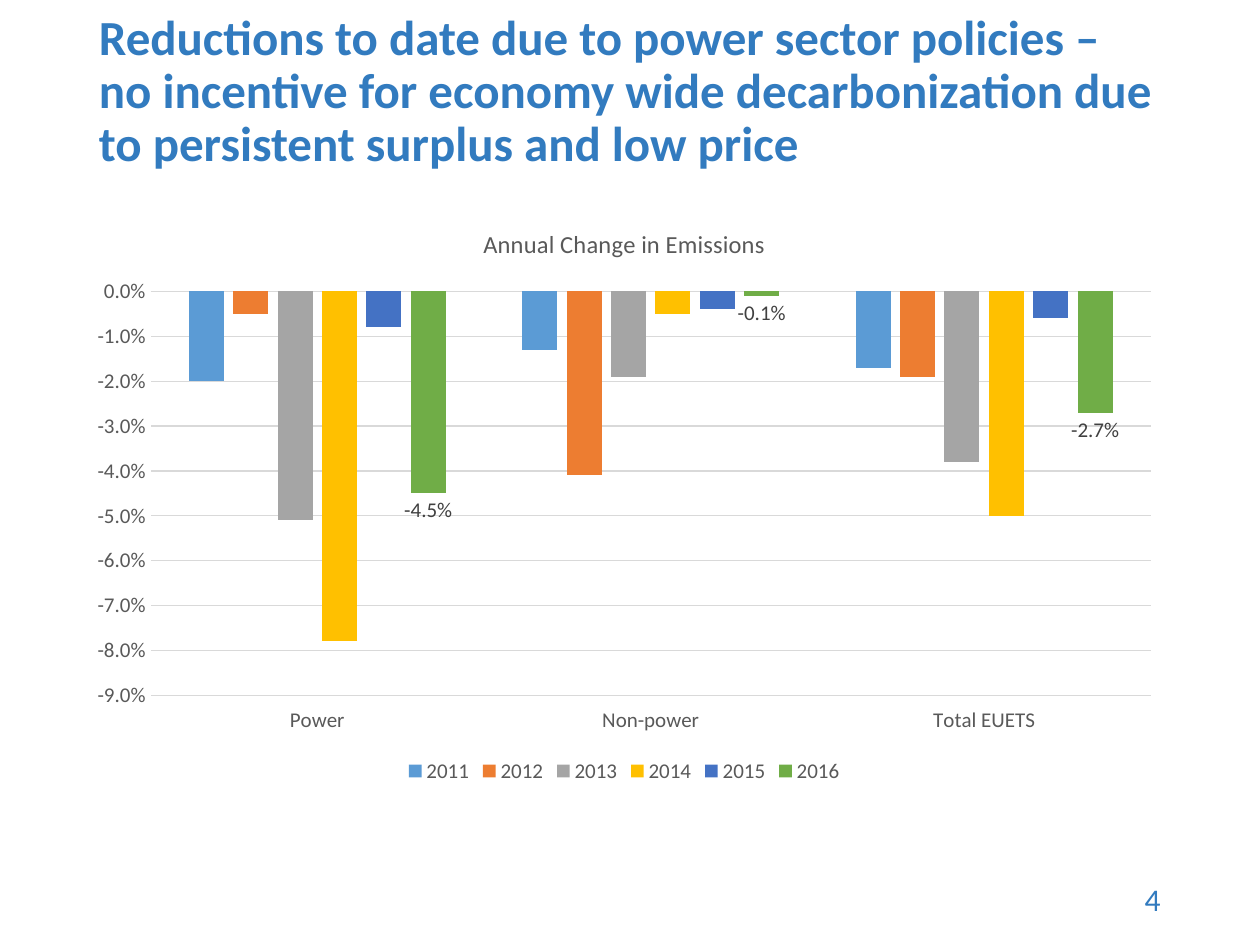
"""Build a slide with a clustered column chart of annual emission changes."""
from dataclasses import dataclass

from pptx import Presentation
from pptx.chart.data import CategoryChartData
from pptx.dml.color import RGBColor
from pptx.enum.chart import (XL_CHART_TYPE, XL_LABEL_POSITION, XL_LEGEND_POSITION,
                             XL_TICK_LABEL_POSITION, XL_TICK_MARK)
from pptx.enum.text import MSO_ANCHOR, PP_ALIGN
from pptx.util import Pt


@dataclass(frozen=True)
class Theme:
    font: str = "Calibri"
    accent: str = "327BBF"
    muted: str = "595959"
    label: str = "404040"
    grid: str = "D9D9D9"
    title_size: int = 28
    number_size: int = 18
    chart_title_size: int = 14
    chart_size: int = 12


theme = Theme()


def style_font(font, size, color, bold=False):
    font.name = theme.font
    font.size = Pt(size)
    font.bold = bold
    font.color.rgb = RGBColor.from_string(color)


def add_text(slide, text, box, size, alignment, bold=False):
    frame = slide.shapes.add_textbox(*map(Pt, box)).text_frame
    frame.word_wrap = True
    frame.vertical_anchor = MSO_ANCHOR.MIDDLE
    paragraph = frame.paragraphs[0]
    paragraph.text = text
    paragraph.alignment = alignment
    paragraph.line_spacing = 0.9
    style_font(paragraph.font, size, theme.accent, bold)


presentation = Presentation()
presentation.slide_width, presentation.slide_height = Pt(720), Pt(540)
slide = presentation.slides.add_slide(presentation.slide_layouts[6])

add_text(slide, "Reductions to date due to power sector policies – no incentive for economy "
         "wide decarbonization due to persistent surplus and low price",
         (49.5, 0.7, 621, 104.4), theme.title_size, PP_ALIGN.LEFT, bold=True)

emissions = {
    "2011": ("5B9BD5", (-0.02, -0.013, -0.017)),
    "2012": ("ED7D31", (-0.005, -0.041, -0.019)),
    "2013": ("A5A5A5", (-0.051, -0.019, -0.038)),
    "2014": ("FFC000", (-0.078, -0.005, -0.05)),
    "2015": ("4472C4", (-0.008, -0.004, -0.006)),
    "2016": ("70AD47", (-0.045, -0.001, -0.027)),
}
chart_data = CategoryChartData(number_format="0.0%")
chart_data.categories = ["Power", "Non-power", "Total EUETS"]
for year, (color, changes) in emissions.items():
    chart_data.add_series(year, changes)

chart = slide.shapes.add_chart(XL_CHART_TYPE.COLUMN_CLUSTERED, Pt(43.2), Pt(116.6),
                               Pt(627), Pt(334), chart_data).chart
style_font(chart.font, theme.chart_size, theme.muted)
chart.has_title = True
chart_title = chart.chart_title.text_frame.paragraphs[0]
chart_title.text = "Annual Change in Emissions"
style_font(chart_title.font, theme.chart_title_size, theme.muted)
chart.chart_title.include_in_layout = False

chart.has_legend = True
chart.legend.position = XL_LEGEND_POSITION.BOTTOM
chart.legend.include_in_layout = False
style_font(chart.legend.font, theme.chart_size, theme.muted)

category_axis, value_axis = chart.category_axis, chart.value_axis
for axis in (category_axis, value_axis):
    axis.major_tick_mark = axis.minor_tick_mark = XL_TICK_MARK.NONE
    style_font(axis.tick_labels.font, theme.chart_size, theme.muted)
category_axis.tick_label_position = XL_TICK_LABEL_POSITION.LOW
value_axis.minimum_scale, value_axis.maximum_scale = -0.09, 0
value_axis.major_unit = 0.01
value_axis.tick_labels.number_format = "0.0%"
value_axis.tick_labels.number_format_is_linked = False
value_axis.format.line.fill.background()
for line in (category_axis.format.line, value_axis.major_gridlines.format.line):
    line.width = Pt(0.75)
    line.color.rgb = RGBColor.from_string(theme.grid)

plot = chart.plots[0]
plot.vary_by_categories = False
plot.gap_width, plot.overlap = 219, -27
for series, (color, changes) in zip(plot.series, emissions.values()):
    series.invert_if_negative = False
    series.format.fill.solid()
    series.format.fill.fore_color.rgb = RGBColor.from_string(color)

labels = plot.series[-1].data_labels
labels.show_value = True
labels.position = XL_LABEL_POSITION.OUTSIDE_END
labels.number_format = "0.0%"
labels.number_format_is_linked = False
style_font(labels.font, theme.chart_size, theme.label)

add_text(slide, "4", (508.3, 500.4, 162, 28.8), theme.number_size, PP_ALIGN.RIGHT)

presentation.save("out.pptx")
